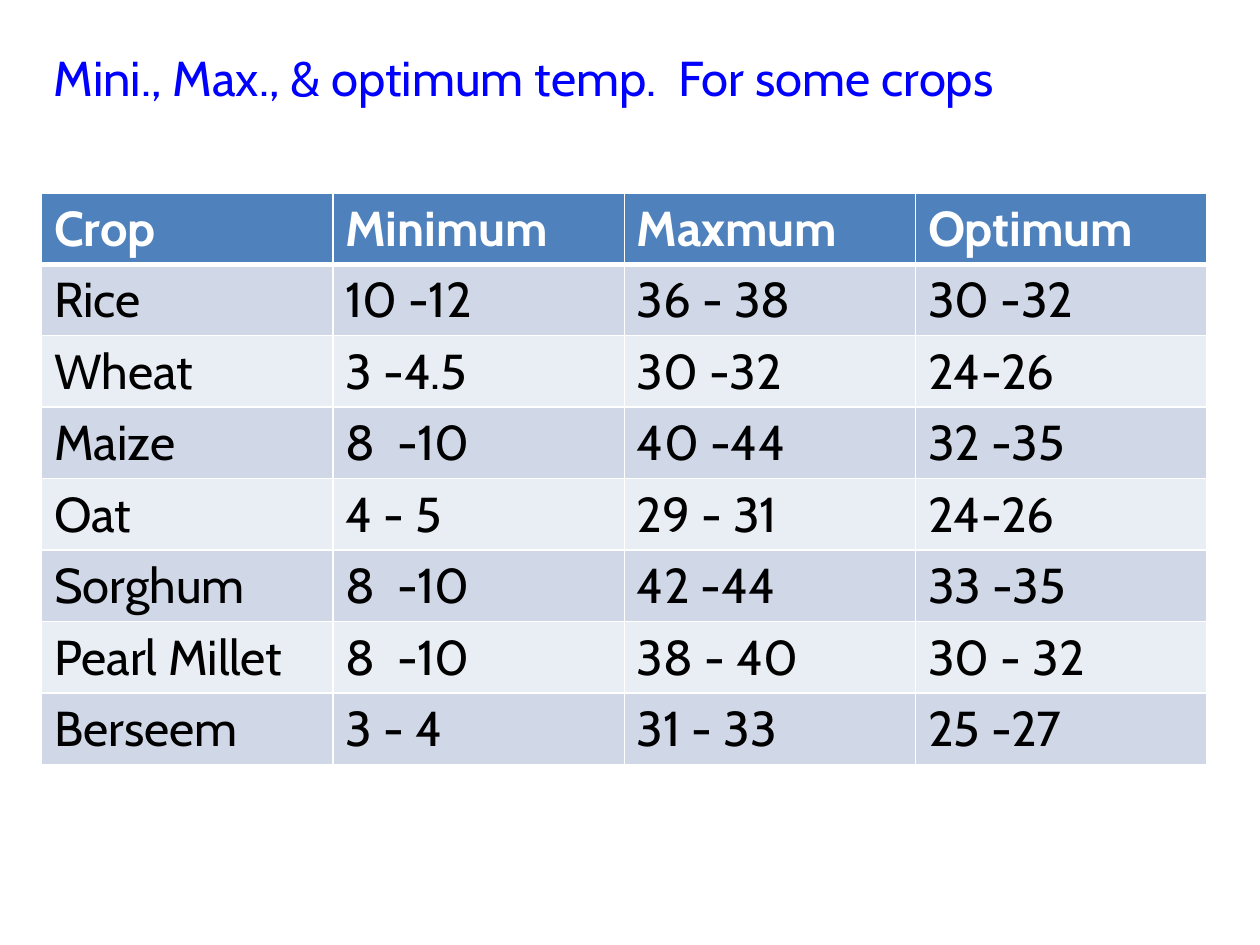
from dataclasses import dataclass

from lxml.etree import SubElement
from pptx import Presentation
from pptx.dml.color import RGBColor as Rgb
from pptx.enum.text import MSO_AUTO_SIZE as AutoSize
from pptx.oxml.ns import qn
from pptx.util import Inches, Pt


@dataclass(frozen=True)
class Theme:
    font: str = "Cabin"
    size: int = 28
    title: str = "0000FF"
    header: str = "4F81BD"
    header_text: str = "FFFFFF"
    body_text: str = "000000"
    bands: tuple = ("D0D8E8", "E9EDF4")
    rule: str = "FFFFFF"
    thin: int = 1
    thick: int = 3


class CropSlide:
    """Draws the parts of one slide in a shared theme."""

    def __init__(self, slide, theme):
        self.slide = slide
        self.theme = theme

    def run(self, frame, words, color, bold=False):
        run = frame.paragraphs[0].add_run()
        run.text = words
        run.font.name = self.theme.font
        run.font.size = Pt(self.theme.size)
        run.font.bold = bold
        run.font.color.rgb = Rgb.from_string(color)

    def title(self, words, left, top, width, height):
        frame = self.slide.shapes.add_textbox(left, top, width, height).text_frame
        frame.word_wrap = True
        frame.auto_size = AutoSize.SHAPE_TO_FIT_TEXT
        self.run(frame, words, self.theme.title)

    def borders(self, cell, top, bottom):
        thin = self.theme.thin
        properties = cell._tc.get_or_add_tcPr()
        sides = (("a:lnL", thin), ("a:lnR", thin), ("a:lnT", top), ("a:lnB", bottom))
        for position, (side, weight) in enumerate(sides):
            line = SubElement(properties, qn(side), w=str(Pt(weight)))
            fill = SubElement(line, qn("a:solidFill"))
            SubElement(fill, qn("a:srgbClr"), val=self.theme.rule)
            properties.insert(position, line)

    def table(self, rows, left, top, width, height):
        theme = self.theme
        grid = self.slide.shapes.add_table(
            len(rows), len(rows[0]), left, top, width, height
        ).table
        for r, row in enumerate(rows):
            is_header = r == 0
            fill = theme.header if is_header else theme.bands[(r - 1) % 2]
            color = theme.header_text if is_header else theme.body_text
            above = theme.thick if r == 1 else theme.thin
            below = theme.thick if is_header else theme.thin
            for c, words in enumerate(row):
                cell = grid.cell(r, c)
                cell.fill.solid()
                cell.fill.fore_color.rgb = Rgb.from_string(fill)
                self.borders(cell, above, below)
                self.run(cell.text_frame, words, color, bold=is_header)


CROP_TEMPERATURES = (
    ("Crop", "Minimum", "Maxmum", "Optimum"),
    ("Rice", "10 -12", "36 - 38", "30 -32"),
    ("Wheat", "3 -4.5", "30 -32", "24-26"),
    ("Maize", "8  -10", "40 -44", "32 -35"),
    ("Oat", "4 - 5", "29 - 31", "24-26"),
    ("Sorghum", "8  -10", "42 -44", "33 -35"),
    ("Pearl Millet", "8  -10", "38 - 40", "30 - 32"),
    ("Berseem", "3 - 4", "31 - 33", "25 -27"),
)


def main():
    deck = Presentation()
    deck.slide_width, deck.slide_height = Inches(10), Inches(7.5)
    crops = CropSlide(deck.slides.add_slide(deck.slide_layouts[6]), Theme())
    margin = Inches(0.33)
    crops.title(
        "Mini., Max., & optimum temp.  For some crops",
        margin, Inches(0.33), Inches(9.42), Inches(0.57),
    )
    crops.table(CROP_TEMPERATURES, margin, Inches(1.53), Inches(9.25), Inches(4.53))
    deck.save("out.pptx")


if __name__ == "__main__":
    main()
